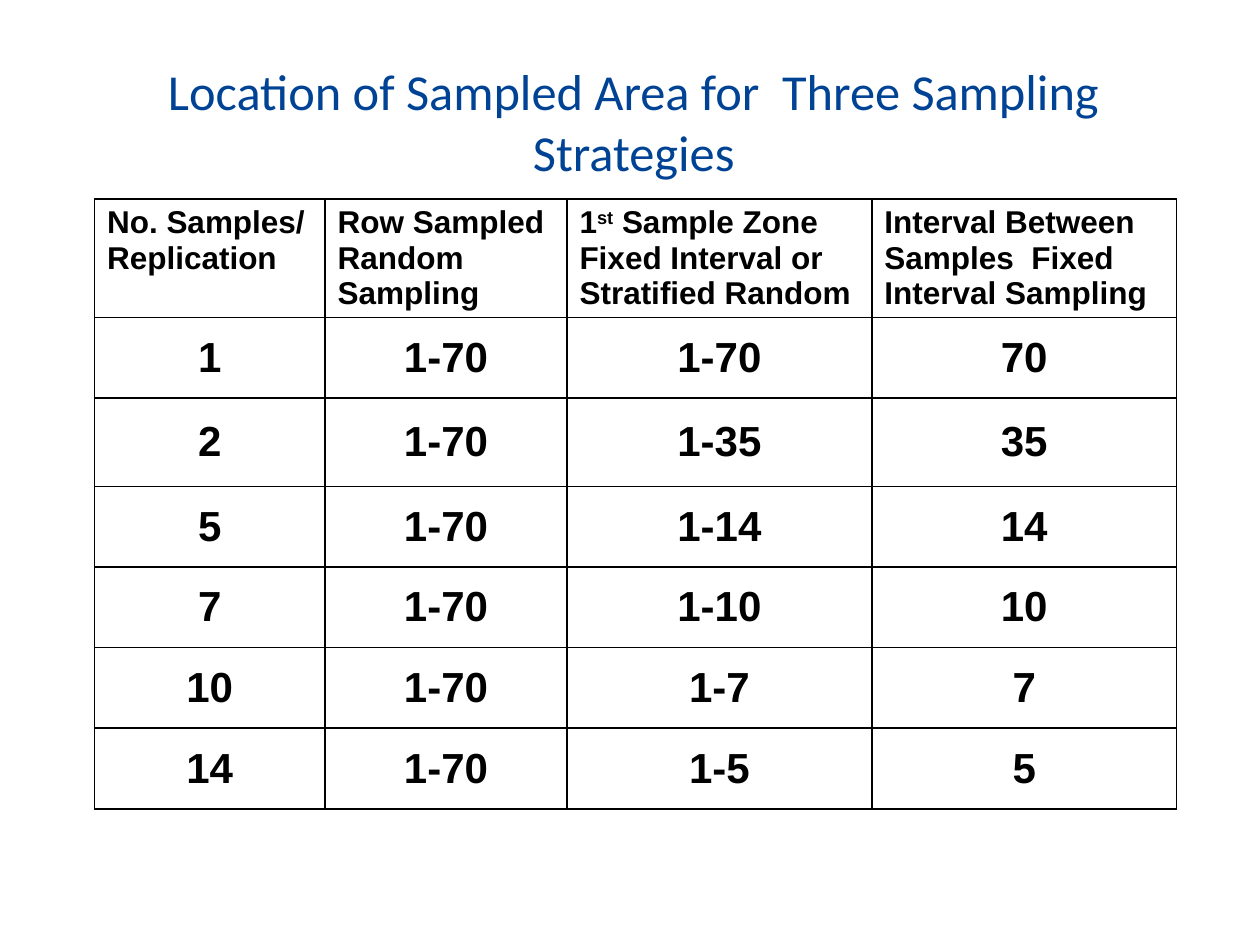
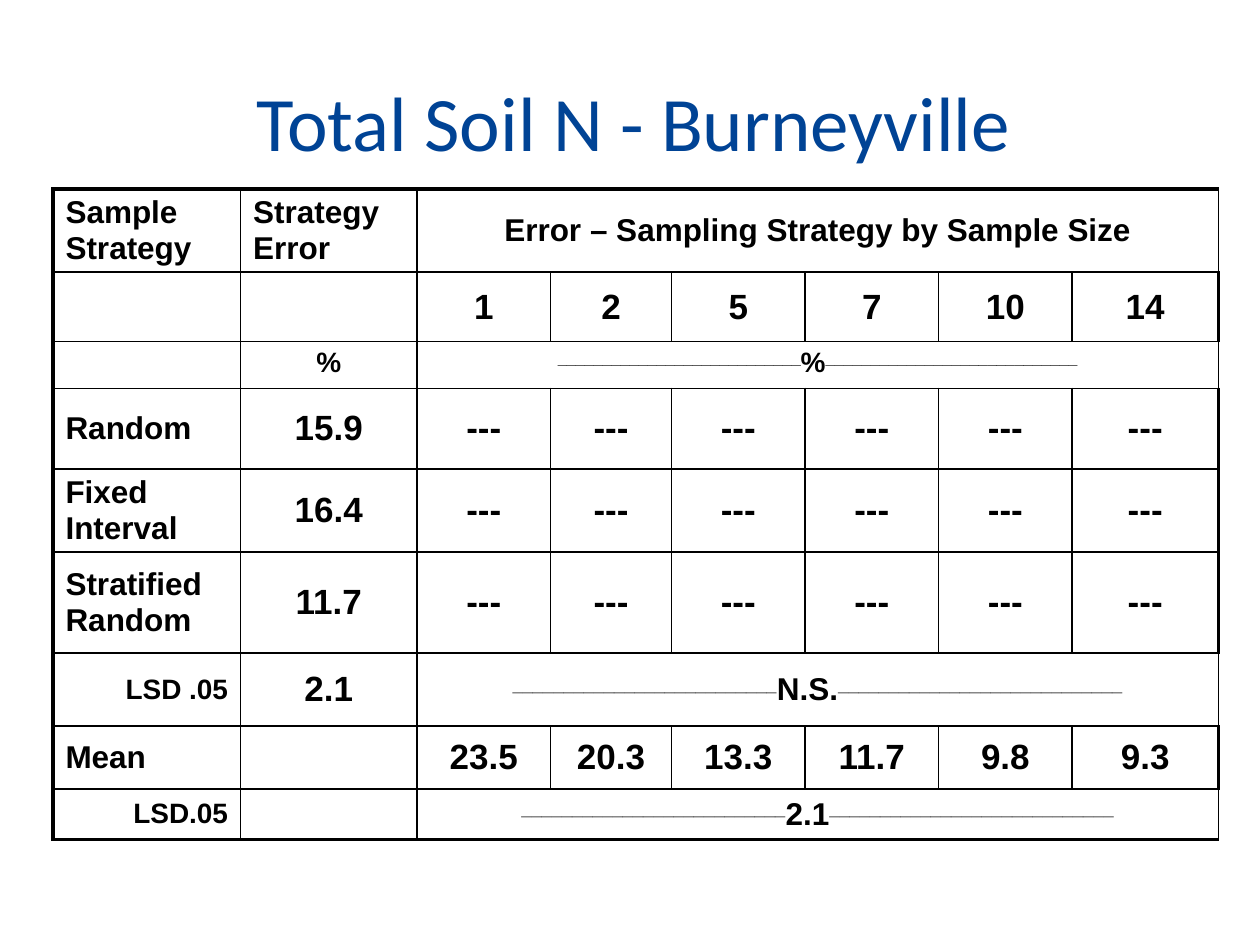
import dataclasses

import lxml.etree
import pptx
import pptx.dml.color
import pptx.enum.text
import pptx.oxml.ns
import pptx.util

Inches = pptx.util.Inches
Pt = pptx.util.Pt
qn = pptx.oxml.ns.qn
LEFT, CENTER, RIGHT = (pptx.enum.text.PP_ALIGN.LEFT, pptx.enum.text.PP_ALIGN.CENTER,
                       pptx.enum.text.PP_ALIGN.RIGHT)
TOP, MIDDLE = pptx.enum.text.MSO_ANCHOR.TOP, pptx.enum.text.MSO_ANCHOR.MIDDLE


@dataclasses.dataclass(frozen=True)
class Theme:
    """Colours, fonts, type sizes and line widths shared by the slides."""
    title_color: str = "004395"
    ink: str = "000000"
    paper: str = "FFFFFF"
    title_font: str = "Calibri"
    body_font: str = "Arial"
    long_title: float = 28.8
    short_title: float = 44
    heading: float = 18
    note: float = 16
    error: float = 20
    location: float = 24
    thin: float = 1
    frame: float = 2.25
    superscript: int = 30000
    space_before: int = 20000


THEME = Theme()
TITLE_BOX = (0.75, 0.42, 8.5, 1.08)

LOCATION_BOX = (0.75, 1.58, 8.58, 4.54)
LOCATION_COLUMNS = (1.83, 1.92, 2.42, 2.42)
LOCATION_ROWS = (0.64, 0.64, 0.7, 0.64, 0.64, 0.64, 0.64)
LOCATION_HEADINGS = (
    [("No. Samples/ Replication", False)],
    [("Row Sampled Random Sampling", False)],
    [("1", False), ("st", True), (" Sample Zone Fixed Interval or Stratified Random", False)],
    [("Interval Between Samples  Fixed Interval Sampling", False)],
)
SAMPLE_SIZES = (1, 2, 5, 7, 10, 14)
FIELD_ROWS = 70

ERROR_BOX = (0.42, 1.5, 9.25, 5.1)
ERROR_COLUMNS = (1.49, 1.4, 1.06, 0.96, 1.06, 1.06, 1.06, 1.16)
ERROR_ROWS = (0.64, 0.55, 0.35, 0.64, 0.64, 0.8, 0.58, 0.5, 0.4)
STRATEGY_ERRORS = (("Random", "15.9"), ("Fixed Interval", "16.4"), ("Stratified Random", "11.7"))
MEAN_ERRORS = ("23.5", "20.3", "13.3", "11.7", "9.8", "9.3")


def add_title(slide, box, text, size):
    """Place and format the title placeholder in the box."""
    title = slide.shapes.title
    title.left, title.top, title.width, title.height = map(Inches, box)
    frame = title.text_frame
    frame.word_wrap = True
    frame.auto_size = pptx.enum.text.MSO_AUTO_SIZE.NONE
    frame.vertical_anchor = MIDDLE
    paragraph = frame.paragraphs[0]
    paragraph.alignment = CENTER
    properties = paragraph._p.get_or_add_pPr()
    properties.set("marL", str(Inches(0.06)))
    properties.set("indent", "0")
    run = paragraph.add_run()
    run.text = text
    run.font.size = Pt(size)
    run.font.name = THEME.title_font
    run.font.color.rgb = pptx.dml.color.RGBColor.from_string(THEME.title_color)


def draw_borders(cell, widths):
    """Give a cell its left, right, top and bottom lines."""
    properties = cell._tc.get_or_add_tcPr()
    for position, (side, width) in enumerate(zip("LRTB", widths)):
        line = lxml.etree.Element(qn(f"a:ln{side}"), w=str(Pt(width)))
        fill = lxml.etree.SubElement(line, qn("a:solidFill"))
        lxml.etree.SubElement(fill, qn("a:srgbClr"), val=THEME.ink)
        properties.insert(position, line)


def add_grid(slide, box, columns, rows, frame_width):
    """Add an unfilled ruled table with an outer frame and return it."""
    table = slide.shapes.add_table(len(rows), len(columns), *map(Inches, box)).table
    table.first_row = table.horz_banding = False
    for column, width in zip(table.columns, columns):
        column.width = Inches(width)
    for row, height in zip(table.rows, rows):
        row.height = Inches(height)
    for r in range(len(rows)):
        for c in range(len(columns)):
            cell = table.cell(r, c)
            cell.fill.background()
            on_frame = (c == 0, c == len(columns) - 1, r == 0, r == len(rows) - 1)
            draw_borders(cell, [frame_width if edge else THEME.thin for edge in on_frame])
            ending = lxml.etree.SubElement(cell.text_frame.paragraphs[0]._p, qn("a:endParaRPr"))
            ending.set("sz", str(int(THEME.note * 100)))
    return table


def write(cell, runs, size, align=CENTER, anchor=MIDDLE):
    """Write bold runs, each a text and whether it is raised, in a cell."""
    cell.vertical_anchor = anchor
    paragraph = cell.text_frame.paragraphs[0]
    paragraph.alignment = align
    spacing = lxml.etree.SubElement(paragraph._p.get_or_add_pPr(), qn("a:spcBef"))
    lxml.etree.SubElement(spacing, qn("a:spcPct"), val=str(THEME.space_before))
    for text, raised in runs:
        run = paragraph.add_run()
        run.text = text
        run.font.size = Pt(size)
        run.font.bold = True
        run.font.name = THEME.body_font
        run.font.color.rgb = pptx.dml.color.RGBColor.from_string(THEME.ink)
        if raised:
            run._r.get_or_add_rPr().set("baseline", str(THEME.superscript))


def write_plain(cell, text, size, align=CENTER, anchor=MIDDLE):
    """Write a single run in a cell."""
    write(cell, [(text, False)], size, align, anchor)


def write_ruled(cell, text, size, before, after=28, anchor=MIDDLE):
    """Write a text between two raised rules of the given lengths."""
    write(cell, [("_" * before, True), (text, False), ("_" * after, True)], size, anchor=anchor)


def add_location_table(slide, box):
    """Tabulate where samples lie for each number of samples."""
    table = add_grid(slide, box, LOCATION_COLUMNS, LOCATION_ROWS, THEME.thin)
    for c, heading in enumerate(LOCATION_HEADINGS):
        write(table.cell(0, c), heading, THEME.heading, LEFT, TOP)
    for r, samples in enumerate(SAMPLE_SIZES, 1):
        interval = FIELD_ROWS // samples
        entries = (f"{samples}", f"1-{FIELD_ROWS}", f"1-{interval}", f"{interval}")
        for c, entry in enumerate(entries):
            write_plain(table.cell(r, c), entry, THEME.location)


def add_error_table(slide, box):
    """Tabulate sampling error by strategy and by sample size."""
    table = add_grid(slide, box, ERROR_COLUMNS, ERROR_ROWS, THEME.frame)
    cell = table.cell
    for r in (0, 2, 6, 8):
        cell(r, 2).merge(cell(r, 7))

    write_plain(cell(0, 0), "Sample Strategy", THEME.heading, LEFT, TOP)
    write_plain(cell(0, 1), "Strategy Error", THEME.heading, LEFT, TOP)
    write_plain(cell(0, 2), "Error – Sampling Strategy by Sample Size", THEME.heading)
    write_plain(cell(2, 1), "%", THEME.note, anchor=TOP)
    write_ruled(cell(2, 2), "%", THEME.note, 27, anchor=TOP)

    for r, (strategy, error) in enumerate(STRATEGY_ERRORS, 3):
        write_plain(cell(r, 0), strategy, THEME.heading, LEFT)
        write_plain(cell(r, 1), error, THEME.error)
    no_values = ("---",) * len(SAMPLE_SIZES)
    size_rows = {1: map(str, SAMPLE_SIZES), 3: no_values, 4: no_values, 5: no_values,
                 7: MEAN_ERRORS}
    for r, values in size_rows.items():
        for c, value in enumerate(values, 2):
            write_plain(cell(r, c), value, THEME.error)

    write_plain(cell(6, 1), "2.1", THEME.error)
    write_plain(cell(7, 0), "Mean", THEME.heading, LEFT)
    for r, label, difference in ((6, "LSD .05", "N.S."), (8, "LSD.05", "2.1")):
        write_plain(cell(r, 0), label, THEME.note, RIGHT)
        write_ruled(cell(r, 2), difference, THEME.heading, 26)


def add_table_slide(deck, title, title_size, add_table, box):
    """Add a slide with a title above a table."""
    slide = deck.slides.add_slide(deck.slide_layouts[5])
    background = slide.background.fill
    background.solid()
    background.fore_color.rgb = pptx.dml.color.RGBColor.from_string(THEME.paper)
    add_title(slide, TITLE_BOX, title, title_size)
    add_table(slide, box)


def main():
    """Build and save the presentation."""
    deck = pptx.Presentation()
    deck.slide_width, deck.slide_height = Inches(10), Inches(7.5)
    add_table_slide(deck, "Location of Sampled Area for  Three Sampling Strategies",
                    THEME.long_title, add_location_table, LOCATION_BOX)
    add_table_slide(deck, "Total Soil N - Burneyville",
                    THEME.short_title, add_error_table, ERROR_BOX)
    deck.save("out.pptx")


if __name__ == "__main__":
    main()
